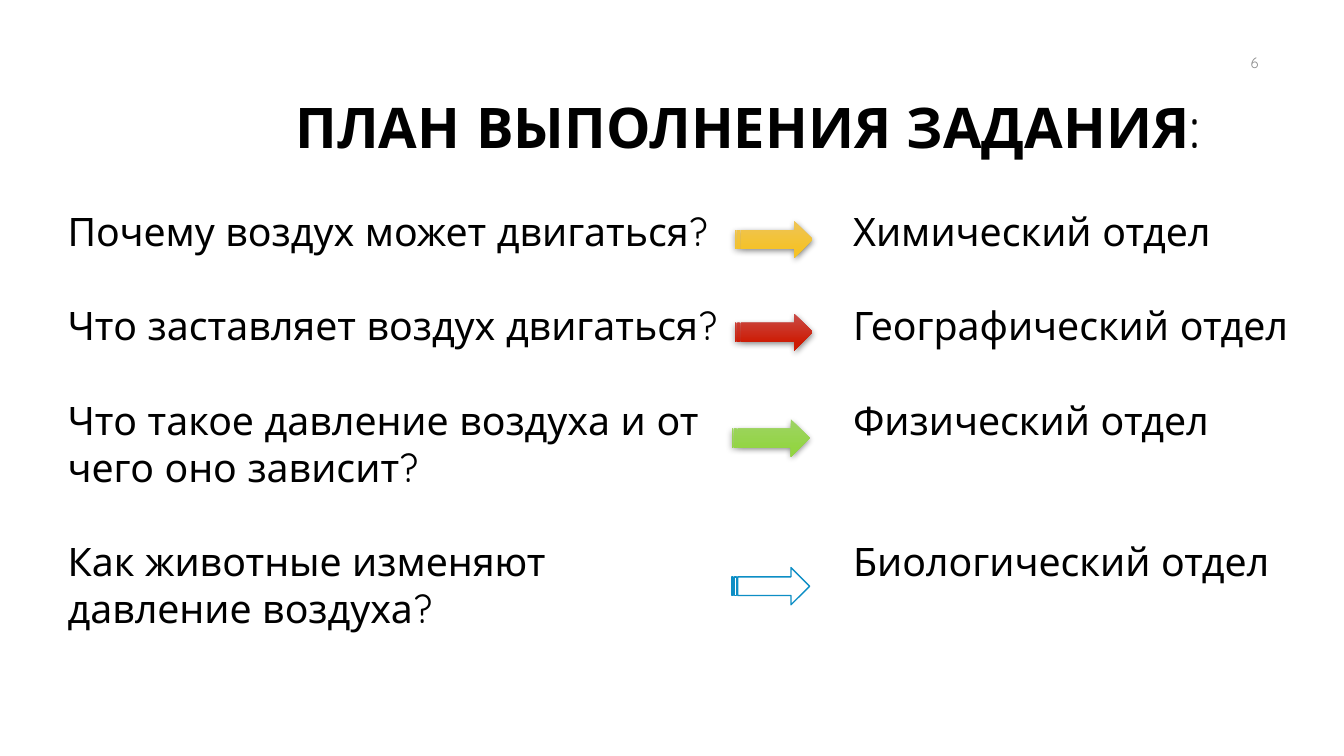
from dataclasses import dataclass

from lxml import etree
from pptx import Presentation
from pptx.dml.color import RGBColor
from pptx.enum.shapes import MSO_SHAPE
from pptx.enum.text import MSO_ANCHOR, MSO_AUTO_SIZE, PP_ALIGN
from pptx.oxml import parse_xml
from pptx.oxml.ns import qn
from pptx.util import Inches, Pt

ARROW = MSO_SHAPE.STRIPED_RIGHT_ARROW
LEFT, RIGHT = PP_ALIGN.LEFT, PP_ALIGN.RIGHT
TOP, MIDDLE = MSO_ANCHOR.TOP, MSO_ANCHOR.MIDDLE
NO_FIT = MSO_AUTO_SIZE.NONE
WIDTH, HEIGHT = Inches(13.33), Inches(7.5)
SHADOW = (
    '<a:outerShdw xmlns:a="http://schemas.openxmlformats.org/drawingml/2006/main" '
    'blurRad="57150" dist="19050" dir="5400000" algn="ctr" rotWithShape="0">'
    '<a:srgbClr val="000000"><a:alpha val="48000"/></a:srgbClr></a:outerShdw>'
)


@dataclass(frozen=True)
class Theme:
    """Hold the font, colours and type sizes of the slide."""

    font: str = "Quicksand"
    ink: str = "000000"
    muted: str = "8C8C8C"
    paper: str = "FFFFFF"
    outline: str = "0D8EC5"
    yellow: tuple = ("EEC457", "F5C228")
    red: tuple = ("C94D48", "CD1B04")
    green: tuple = ("9ED365", "93D543")
    title_size: float = 40
    body_size: float = 28
    number_size: float = 10.5
    line_gap: float = 33.6


THEME = Theme()


def area(left, top, width, height):
    """Turn percentages of the slide into lengths."""
    return (
        round(WIDTH * left / 100),
        round(HEIGHT * top / 100),
        round(WIDTH * width / 100),
        round(HEIGHT * height / 100),
    )


def place(box, bounds, anchor):
    """Position a text shape and prepare its frame."""
    box.left, box.top, box.width, box.height = area(*bounds)
    frame = box.text_frame
    frame.word_wrap = True
    frame.auto_size = NO_FIT
    frame.vertical_anchor = anchor
    return frame


def write(para, text, size=THEME.body_size, color=THEME.ink, bold=False, align=LEFT):
    """Add a formatted span to a paragraph."""
    para.alignment = align
    span = para.add_run()
    span.text = text
    span.font.name = THEME.font
    span.font.size = Pt(size)
    span.font.bold = bold
    span.font.color.rgb = RGBColor.from_string(color)


def add_list(box, bounds, items):
    """Fill a placeholder with unbulleted items given as text and blank lines before."""
    frame = place(box, bounds, TOP)
    for index, (text, gap_lines) in enumerate(items):
        para = frame.add_paragraph() if index else frame.paragraphs[0]
        properties = para._p.get_or_add_pPr()
        properties.set("marL", "0")
        properties.set("indent", "0")
        etree.SubElement(properties, qn("a:buNone"))
        para.space_before = Pt(gap_lines * THEME.line_gap)
        write(para, text)


def add_arrow(page, left, top, colors=None):
    """Draw a shaded arrow, or an outlined one when no colours are given."""
    arrow = page.shapes.add_shape(ARROW, *area(left, top, 5.78, 4.93))
    arrow.shadow.inherit = False
    if colors is None:
        arrow.fill.solid()
        arrow.fill.fore_color.rgb = RGBColor.from_string(THEME.paper)
        arrow.line.color.rgb = RGBColor.from_string(THEME.outline)
        arrow.line.width = Pt(1)
        return
    arrow.line.fill.background()
    arrow.fill.gradient()
    arrow.fill.gradient_angle = 270
    for stop, position, color in zip(arrow.fill.gradient_stops, (0, 0.78), colors):
        stop.position = position
        stop.color.rgb = RGBColor.from_string(color)
    arrow._element.spPr.find(qn("a:effectLst")).append(parse_xml(SHADOW))


def main():
    """Build the task plan slide."""
    deck = Presentation()
    deck.slide_width, deck.slide_height = WIDTH, HEIGHT
    page = deck.slides.add_slide(deck.slide_layouts[3])
    title, questions, answers = page.placeholders

    heading = place(title, (19.35, 7.87, 70.67, 18.8), MIDDLE).paragraphs[0]
    heading.line_spacing = 0.9
    write(heading, "ПЛАН ВЫПОЛНЕНИЯ ЗАДАНИЯ", THEME.title_size, bold=True, align=RIGHT)
    write(heading, ":", THEME.title_size, align=RIGHT)

    number = page.shapes.add_textbox(0, 0, 0, 0)
    frame = place(number, (71.87, 5.6, 22.5, 5.33), MIDDLE)
    write(frame.paragraphs[0], "6", THEME.number_size, THEME.muted, align=RIGHT)

    add_list(questions, (4.28, 26.8, 50.19, 57.87), [
        ("Почему воздух может двигаться?", 0),
        ("Что заставляет воздух двигаться?", 1),
        ("Что такое давление воздуха и от чего оно зависит?", 1),
        ("Как животные изменяют давление воздуха?", 1),
    ])
    add_list(answers, (62.72, 26.8, 37.28, 51.6), [
        ("Химический отдел", 0),
        ("Географический отдел", 1),
        ("Физический отдел", 1),
        ("Биологический отдел", 2),
    ])

    add_arrow(page, 54.69, 29.2, THEME.yellow)
    add_arrow(page, 54.69, 41.47, THEME.red)
    add_arrow(page, 54.46, 55.47, THEME.green)
    add_arrow(page, 54.46, 75.07)
    deck.save("out.pptx")


if __name__ == "__main__":
    main()
